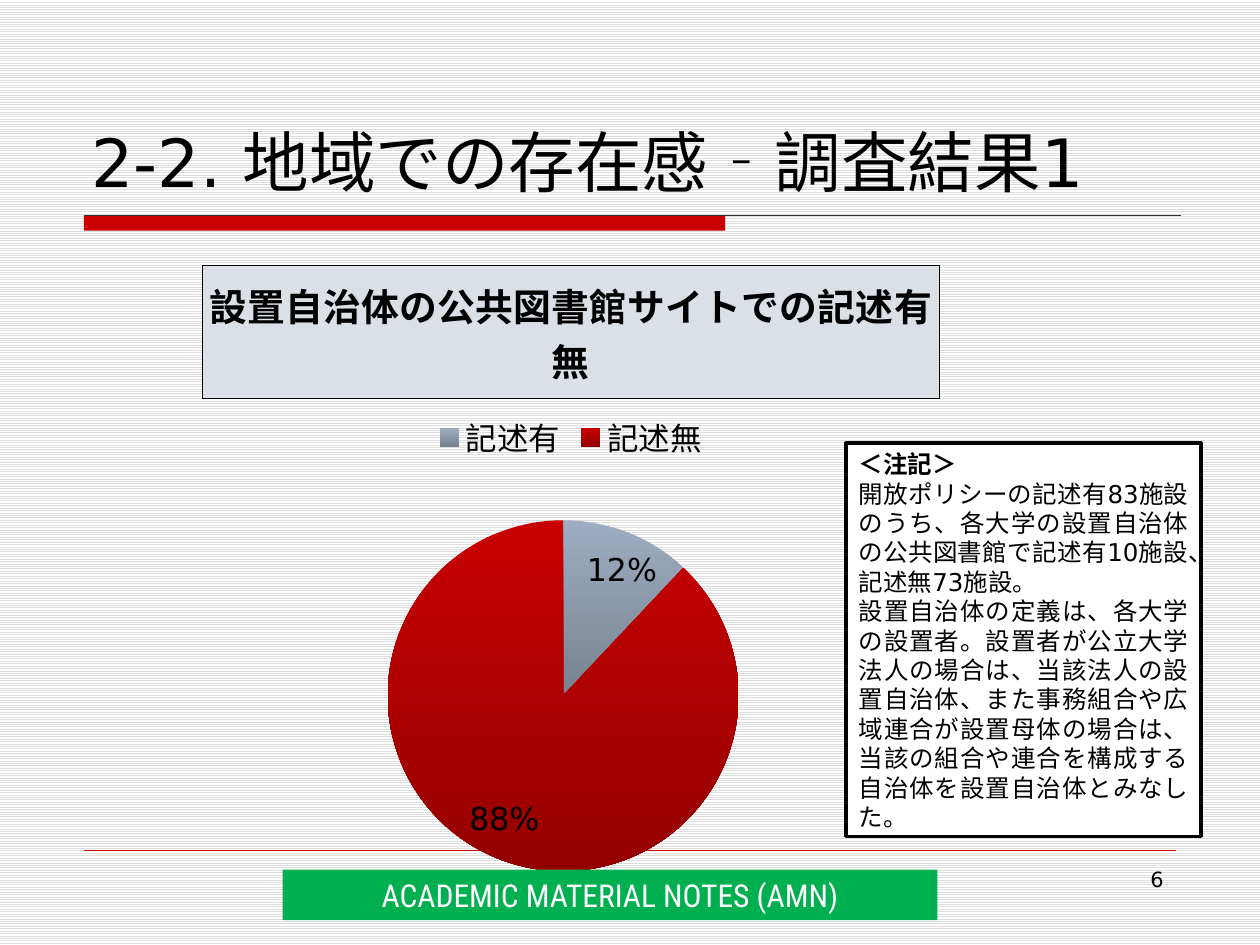
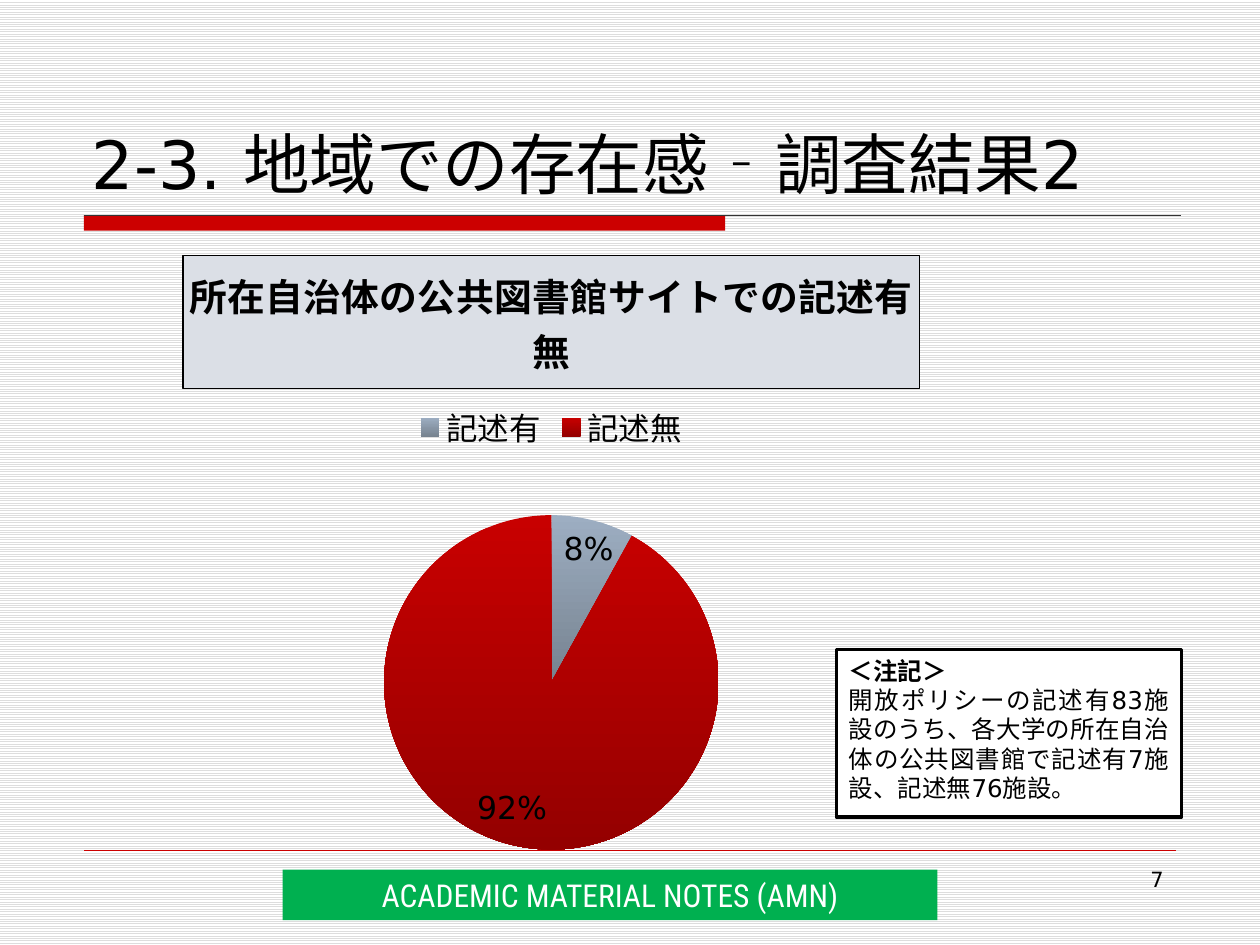
from lxml import etree
from pptx import Presentation
from pptx.chart.data import CategoryChartData
from pptx.dml.color import RGBColor
from pptx.enum import chart as charts, dml, shapes, text
from pptx.oxml import parse_xml
from pptx.oxml.ns import nsdecls, qn
from pptx.util import Cm, Pt

COLORS = {
    "black": "000000", "white": "FFFFFF", "stripe": "DDDDDD", "red": "CC0000",
    "rule": "333333", "green": "00B050", "heading": "DBDFE6",
}
SLICES = [("9DAEC2", "76828F"), ("C80000", "940000")]
FONT = "DejaVu Sans"
BAND_FONT = "Roboto Condensed"
BAND = "ACADEMIC MATERIAL NOTES (AMN)"
CATEGORIES = ["記述有", "記述無"]
NOTE_HEAD = "＜注記＞"

SLIDES = [
    {
        "number": 6,
        "title": "2-2. 地域での存在感‐調査結果1",
        "title_at": (1.59, 0.79),
        "heading": "設置自治体の公共図書館サイトでの記述有無",
        "values": (12, 88),
        "chart_box": (1.78, 4.96, 19.46, 12.98),
        "pie": (7.81, 10.49, 7.08),
        "note_box": (17.06, 8.93, 7.15, 7.93),
        "note": [
            "開放ポリシーの記述有83施設のうち、各大学の設置自治体の公共図書館で"
            "記述有10施設、記述無73施設。",
            "設置自治体の定義は、各大学の設置者。設置者が公立大学法人の場合は、"
            "当該法人の設置自治体、また事務組合や広域連合が設置母体の場合は、"
            "当該の組合や連合を構成する自治体を設置自治体とみなした。",
        ],
    },
    {
        "number": 7,
        "title": "2-3. 地域での存在感‐調査結果2",
        "title_at": (1.6, 0.84),
        "heading": "所在自治体の公共図書館サイトでの記述有無",
        "values": (8, 92),
        "chart_box": (1.59, 4.76, 19.05, 12.7),
        "pie": (7.75, 10.38, 6.74),
        "note_box": (16.86, 13.09, 6.96, 3.38),
        "note": [
            "開放ポリシーの記述有83施設のうち、各大学の所在自治体の公共図書館で"
            "記述有7施設、記述無76施設。",
        ],
    },
]


def rgb(name):
    return RGBColor.from_string(COLORS[name])


def cms(*lengths):
    return [Cm(length) for length in lengths]


def style(paragraph, size, color="black", font=FONT, bold=False, align=None):
    paragraph.alignment = align
    for run in paragraph.runs:
        run.font.size = Pt(size)
        run.font.name = font
        run.font.bold = bold
        run.font.color.rgb = rgb(color)


def add_rect(slide, box, fill, line=None):
    rect = slide.shapes.add_shape(shapes.MSO_SHAPE.RECTANGLE, *cms(*box))
    rect.shadow.inherit = False
    rect.fill.solid()
    rect.fill.fore_color.rgb = rgb(fill)
    if line:
        rect.line.color.rgb = rgb(line)
        rect.line.width = Pt(2)
    else:
        rect.line.fill.background()
    rect.text_frame.word_wrap = True
    return rect


def add_rule(slide, left, right, y, color, width):
    rule = slide.shapes.add_connector(
        shapes.MSO_CONNECTOR.STRAIGHT, *cms(left, y, right, y))
    rule.line.color.rgb = rgb(color)
    rule.line.width = Pt(width)
    etree.SubElement(rule._element.spPr, qn("a:effectLst"))


def add_title(slide, words, at):
    title = slide.shapes.title
    title.left, title.top, title.width, title.height = cms(*at, 22.23, 3.38)
    frame = title.text_frame
    frame.text = words
    frame.auto_size = text.MSO_AUTO_SIZE.NONE
    frame.vertical_anchor = text.MSO_ANCHOR.BOTTOM
    style(frame.paragraphs[0], 38, align=text.PP_ALIGN.LEFT)


def add_rules(slide):
    add_rect(slide, (1.69, 4.34, 12.93, 0.31), "red")
    add_rule(slide, 1.7, 23.8, 4.34, "rule", 0.75)
    add_rule(slide, 1.7, 23.7, 17.15, "red", 0.25)


def add_footer(slide, number):
    page = slide.shapes.add_textbox(*cms(18.21, 17.35, 5.5, 1.32)).text_frame
    page.word_wrap = True
    page.text = str(number)
    style(page.paragraphs[0], 12, align=text.PP_ALIGN.RIGHT)
    band = add_rect(slide, (5.7, 17.53, 13.2, 1.02), "green").text_frame
    band.vertical_anchor = text.MSO_ANCHOR.MIDDLE
    band.text = BAND
    style(band.paragraphs[0], 18, "white", BAND_FONT, align=text.PP_ALIGN.CENTER)


def place_pie(chart, box, pie):
    left, top, width, height = box
    x, y, size = pie
    parts = {"x": (x - left) / width, "y": (y - top) / height,
             "w": size / width, "h": size / height}
    modes = "".join(f'<c:{key}Mode val="edge"/>' for key in "xy")
    places = "".join(f'<c:{key} val="{part:.3f}"/>' for key, part in parts.items())
    plot_area = chart._chartSpace.chart.plotArea
    for layout in plot_area.findall(qn("c:layout")):
        plot_area.remove(layout)
    plot_area.insert(0, parse_xml(
        f'<c:layout {nsdecls("c")}><c:manualLayout><c:layoutTarget val="inner"/>'
        f"{modes}{places}</c:manualLayout></c:layout>"))


def add_pie(slide, heading, values, box, pie):
    data = CategoryChartData(number_format="General")
    data.categories = CATEGORIES
    data.add_series(heading, values)
    chart = slide.shapes.add_chart(
        charts.XL_CHART_TYPE.PIE, *cms(*box), data).chart
    chart.font.size = Pt(18)
    chart.font.name = FONT
    chart.font.color.rgb = rgb("black")

    title = chart.chart_title
    title.text_frame.text = heading
    style(title.text_frame.paragraphs[0], 21.6, bold=True)
    title.format.fill.solid()
    title.format.fill.fore_color.rgb = rgb("heading")
    title.format.line.color.rgb = rgb("black")
    title.format.line.width = Pt(0.75)

    chart.has_legend = True
    chart.legend.position = charts.XL_LEGEND_POSITION.TOP
    chart.legend.include_in_layout = False

    plot = chart.plots[0]
    plot.vary_by_categories = True
    plot.has_data_labels = True
    labels = plot.data_labels
    labels.show_value = False
    labels.show_percentage = True
    labels.number_format = "0%"
    labels.number_format_is_linked = False
    labels.position = charts.XL_LABEL_POSITION.BEST_FIT
    for index, shades in enumerate(SLICES):
        slice_format = plot.series[0].points[index].format
        slice_format.fill.gradient()
        slice_format.fill.gradient_angle = 270
        for stop, shade in zip(slice_format.fill.gradient_stops, shades):
            stop.color.rgb = RGBColor.from_string(shade)
        slice_format.line.fill.background()
    place_pie(chart, box, pie)


def add_note(slide, note, box):
    frame = add_rect(slide, box, "white", "black").text_frame
    frame.vertical_anchor = text.MSO_ANCHOR.TOP
    frame.text = "\n".join([NOTE_HEAD, *note])
    for index, paragraph in enumerate(frame.paragraphs):
        style(paragraph, 14, bold=index == 0, align=text.PP_ALIGN.JUSTIFY)


def main():
    prs = Presentation()
    prs.slide_width, prs.slide_height = cms(25.4, 19.05)
    backdrop = prs.slide_master.background.fill
    backdrop.patterned()
    backdrop.pattern = dml.MSO_PATTERN.LIGHT_HORIZONTAL
    backdrop.fore_color.rgb = rgb("stripe")
    backdrop.back_color.rgb = rgb("white")
    for content in SLIDES:
        slide = prs.slides.add_slide(prs.slide_layouts[5])
        add_title(slide, content["title"], content["title_at"])
        add_rules(slide)
        add_pie(slide, content["heading"], content["values"],
                content["chart_box"], content["pie"])
        add_note(slide, content["note"], content["note_box"])
        add_footer(slide, content["number"])
    prs.save("out.pptx")


if __name__ == "__main__":
    main()
